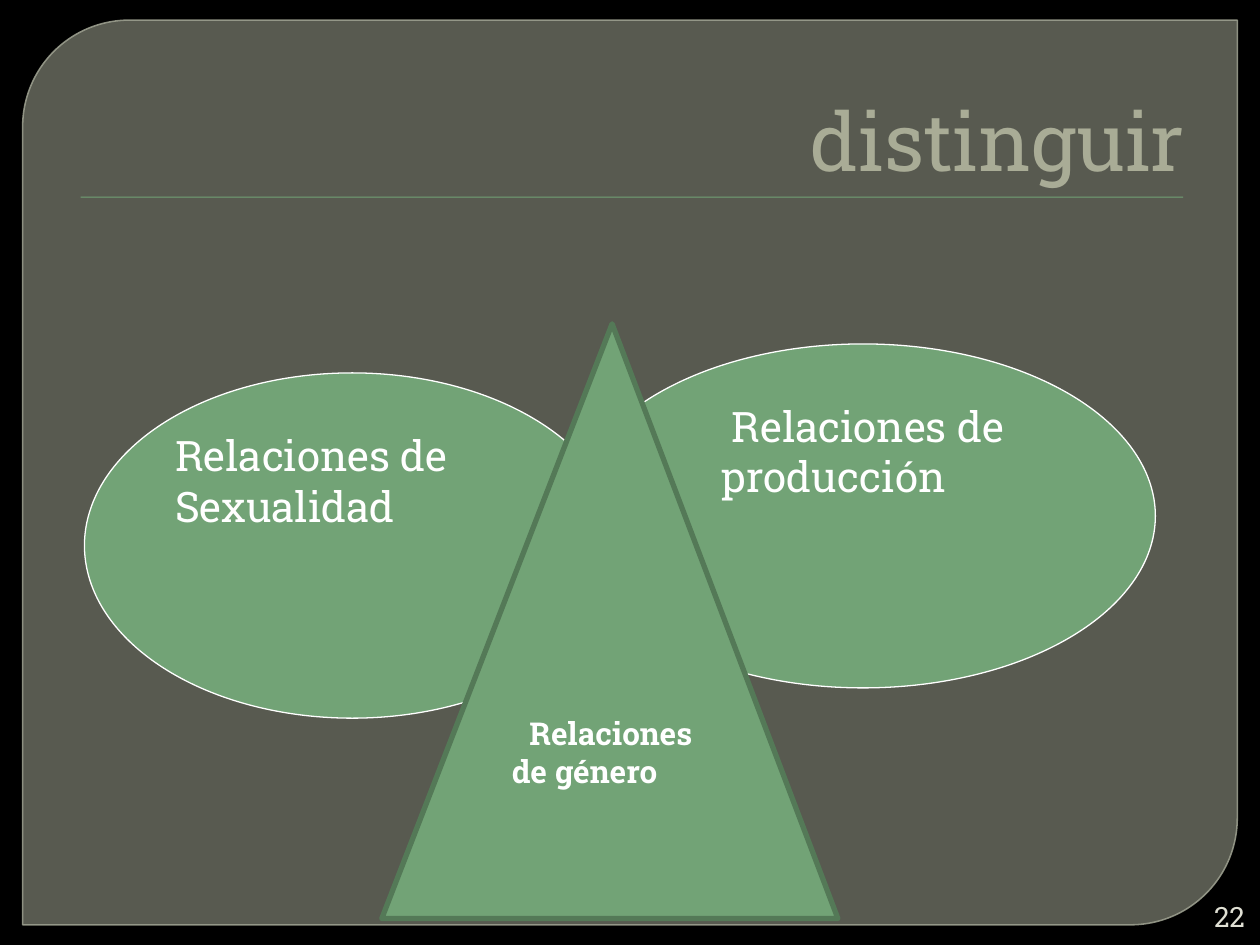
from lxml import etree
from pptx import Presentation, util as u
from pptx.dml.color import RGBColor
from pptx.enum import shapes, text
from pptx.oxml.ns import qn

COLORS = {
    "background": "000000", "panel": "888B7B", "panel_edge": "9DA090",
    "green": "72A376", "dark_green": "547957", "white": "FFFFFF",
    "title": "E7EACB", "number": "E0E0D4",
}
FONT = "Roboto Slab"


class SlideBuilder:
    def __init__(self, slide):
        self.slide = slide
        fill = slide.background.fill
        fill.solid()
        fill.fore_color.rgb = self.color("background")

    def color(self, name):
        return RGBColor.from_string(COLORS[name])

    def place(self, shape, left, top, width, height):
        shape.left, shape.top = u.Inches(left), u.Inches(top)
        shape.width, shape.height = u.Inches(width), u.Inches(height)

    def set_alpha(self, shape, route, percent):
        color = shape._element.spPr.find(route, shape._element.nsmap)
        etree.SubElement(color, qn("a:alpha"), val=str(percent * 1000))

    def shape(self, kind, bounds, fill, line=None, line_width=0.75):
        shape = self.slide.shapes.add_shape(kind, *(u.Inches(v) for v in bounds))
        shape.shadow.inherit = False
        shape.fill.solid()
        shape.fill.fore_color.rgb = self.color(fill)
        if line:
            shape.line.color.rgb = self.color(line)
            shape.line.width = u.Pt(line_width)
        else:
            shape.line.fill.background()
        return shape

    def panel(self, bounds, corner):
        panel = self.shape(shapes.MSO_SHAPE.ROUND_2_DIAG_RECTANGLE, bounds,
                           "panel", "panel_edge", 0.87)
        panel.adjustments[0] = corner
        panel.adjustments[1] = 0
        self.set_alpha(panel, "a:solidFill/a:srgbClr", 65)
        self.set_alpha(panel, "a:ln/a:solidFill/a:srgbClr", 88)

    def format_text(self, shape, words, size, color, anchor, align,
                    insets=(0.1, 0.05, 0.1, 0.05), bold=False):
        frame = shape.text_frame
        frame.text = words
        frame.word_wrap = True
        frame.auto_size = text.MSO_AUTO_SIZE.NONE
        frame.vertical_anchor = anchor
        (frame.margin_left, frame.margin_top,
         frame.margin_right, frame.margin_bottom) = (u.Inches(v) for v in insets)
        for para in frame.paragraphs:
            para.alignment = align
            for span in para.runs:
                span.font.name = FONT
                span.font.size = u.Pt(size)
                span.font.bold = bold
                span.font.color.rgb = self.color(color)

    def indent(self, para, left, first=0):
        properties = para._p.get_or_add_pPr()
        properties.set("marL", str(u.Inches(left)))
        properties.set("indent", str(u.Inches(first)))

    def title(self, words, bounds):
        title = self.slide.shapes.title
        self.place(title, *bounds)
        self.format_text(title, words, 46, "title", text.MSO_ANCHOR.BOTTOM,
                         text.PP_ALIGN.RIGHT, (0.08, 0.04, 0.1, 0.04))

    def page_number(self, words, bounds):
        box = self.slide.shapes.add_textbox(*(u.Inches(v) for v in bounds))
        self.format_text(box, words, 16, "number", text.MSO_ANCHOR.MIDDLE,
                         text.PP_ALIGN.RIGHT, (0.08, 0.04, 0.08, 0.04))

    def ellipse(self, words, bounds, indents):
        ellipse = self.shape(shapes.MSO_SHAPE.OVAL, bounds, "green", "white")
        self.format_text(ellipse, words, 24, "white", text.MSO_ANCHOR.TOP,
                         text.PP_ALIGN.LEFT)
        for para, left in zip(ellipse.text_frame.paragraphs, indents):
            self.indent(para, left)

    def triangle(self, words, bounds):
        triangle = self.shape(shapes.MSO_SHAPE.ISOSCELES_TRIANGLE, bounds,
                              "green", "dark_green", 3)
        triangle.adjustments[0] = 0.505
        self.format_text(triangle, words, 18, "white", text.MSO_ANCHOR.MIDDLE,
                         text.PP_ALIGN.LEFT, (0.1, 0.05, 0.1, 0.33), bold=True)
        self.indent(triangle.text_frame.paragraphs[0], 0.02, 0.14)


def main():
    deck = Presentation()
    deck.slide_width, deck.slide_height = u.Inches(10), u.Inches(7.5)
    page = SlideBuilder(deck.slides.add_slide(deck.slide_layouts[5]))

    page.panel((0.18, 0.16, 9.64, 7.18), 0.118)
    page.shape(shapes.MSO_SHAPE.RECTANGLE, (0.64, 1.56, 8.75, 0.01), "green")
    page.title("distinguir", (0.5, 0.28, 9, 1.25))
    page.page_number("22", (9.45, 7.12, 0.51, 0.3))
    page.ellipse("Relaciones de\nSexualidad", (0.67, 2.96, 4.25, 2.74), (0, 0))
    page.ellipse("Relaciones de\nproducción", (4.53, 2.73, 4.64, 2.73), (0.5, 0.42))
    page.triangle("Relaciones de género", (3.03, 2.57, 3.62, 4.72))

    deck.save("out.pptx")


if __name__ == "__main__":
    main()
